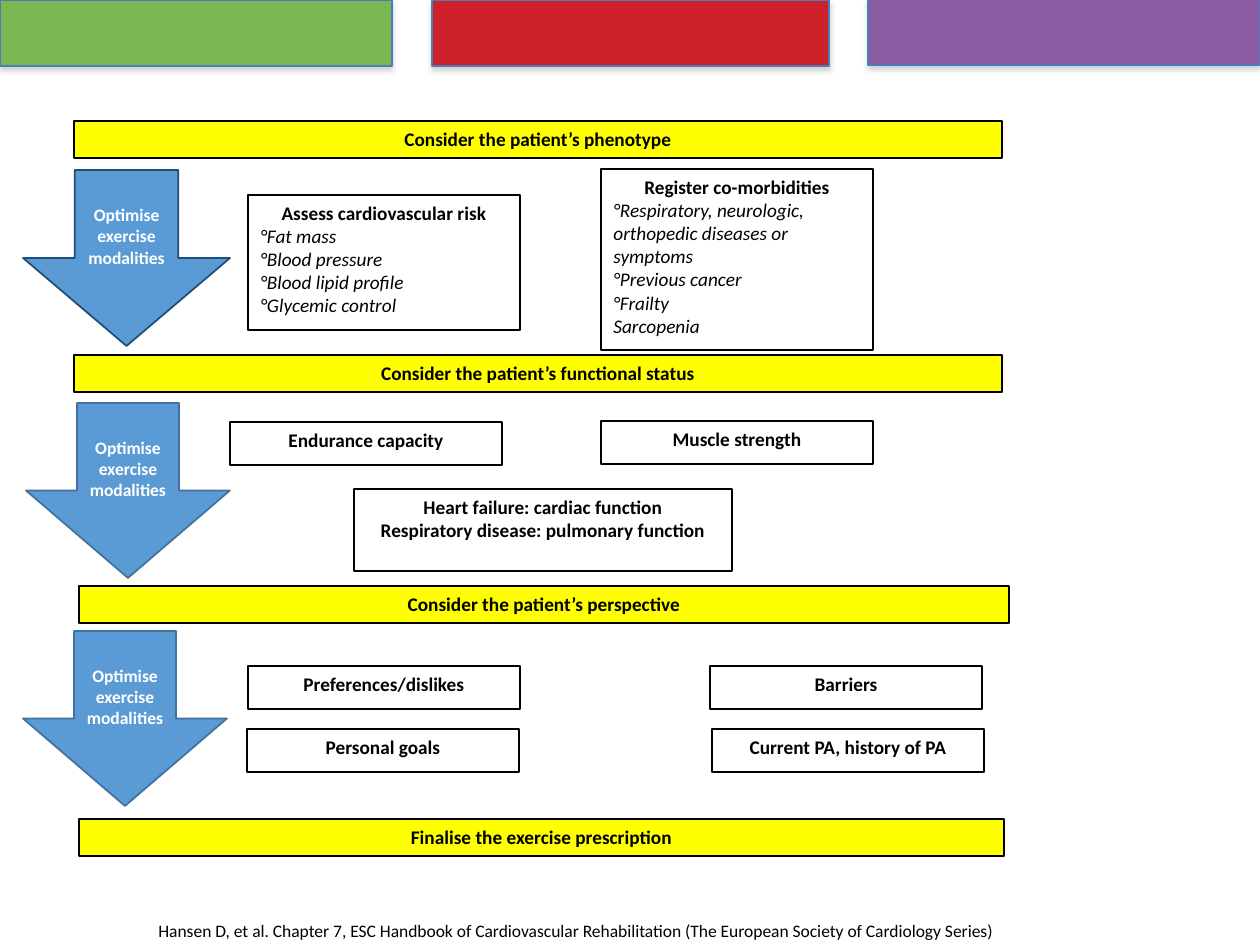
"""Builds a flow slide on tailoring an exercise prescription to the patient."""
from dataclasses import dataclass

from lxml.etree import SubElement
from pptx import Presentation
from pptx.dml.color import RGBColor
from pptx.enum.shapes import MSO_SHAPE
from pptx.enum.text import MSO_ANCHOR, MSO_AUTO_SIZE, PP_ALIGN
from pptx.oxml.ns import qn
from pptx.util import Emu, Pt

PX_PER_INCH = 126
FONT = "Calibri"
BLACK, WHITE, YELLOW, BLUE = "000000", "FFFFFF", "FFFF00", "5B9BD5"


@dataclass
class Band:
    x: int
    y: int
    w: int
    fill: str


@dataclass
class Step:
    x: int
    y: int
    w: int
    text: str


@dataclass
class Arrow:
    x: int
    y: int
    w: int
    h: int
    line: str


@dataclass
class Box:
    x: int
    y: int
    headings: tuple[str, ...]
    items: tuple[str, ...] = ()
    w: int = 272
    h: int = 43


BANDS = [
    Band(0, 0, 392, "7CB852"),
    Band(432, 0, 397, "CD2029"),
    Band(868, -1, 392, "8A5BA1"),
]
STEPS = [
    Step(74, 121, 928, "Consider the patient’s phenotype"),
    Step(74, 355, 928, "Consider the patient’s functional status"),
    Step(79, 586, 930, "Consider the patient’s perspective"),
    Step(79, 819, 925, "Finalise the exercise prescription"),
]
ARROWS = [
    Arrow(23, 170, 207, 176, "1F4D78"),
    Arrow(26, 403, 204, 175, "41719C"),
    Arrow(23, 631, 204, 175, "41719C"),
]
BOXES = [
    Box(248, 195, ("Assess cardiovascular risk",),
        ("°Fat mass", "°Blood pressure", "°Blood lipid profile", "°Glycemic control"), h=135),
    Box(601, 169, ("Register co-morbidities",),
        ("°Respiratory, neurologic, orthopedic diseases or symptoms",
         "°Previous cancer", "°Frailty", "Sarcopenia"), h=181),
    Box(230, 422, ("Endurance capacity",)),
    Box(601, 421, ("Muscle strength",)),
    Box(354, 489, ("Heart failure: cardiac function",
                   "Respiratory disease: pulmonary function"), w=378, h=82),
    Box(248, 666, ("Preferences/dislikes",)),
    Box(710, 666, ("Barriers",)),
    Box(247, 729, ("Personal goals",)),
    Box(712, 729, ("Current PA, history of PA",)),
]
CITATION = ("Hansen D, et al. Chapter 7, ESC Handbook of Cardiovascular Rehabilitation "
            "(The European Society of Cardiology Series)")


def px(n: int) -> Emu:
    """Convert pixels to EMU."""
    return Emu(round(n * 914400 / PX_PER_INCH))


def rgb(value: str) -> RGBColor:
    """Turn a hex string into a colour."""
    return RGBColor.from_string(value)


def add_shape(s, kind, x: int, y: int, w: int, h: int, fill: str, line: str, width=0.75):
    """Add a filled, outlined shape without a shadow."""
    sp = s.shapes.add_shape(kind, px(x), px(y), px(w), px(h))
    sp.shadow.inherit = False
    sp.fill.solid()
    sp.fill.fore_color.rgb = rgb(fill)
    sp.line.color.rgb = rgb(line)
    sp.line.width = Pt(width)
    sp.text_frame.word_wrap = True
    sp.text_frame.vertical_anchor = MSO_ANCHOR.TOP
    return sp


def write(tf, lines, size=11, color=BLACK, bold=False, italic=False, align=PP_ALIGN.LEFT) -> None:
    """Append paragraphs in one style, filling an empty first paragraph."""
    for text in lines:
        p = tf.add_paragraph() if tf.text else tf.paragraphs[0]
        p.add_run().text = text
        p.alignment = align
        p.font.name = FONT
        p.font.size = Pt(size)
        p.font.bold = bold
        p.font.italic = italic
        p.font.color.rgb = rgb(color)


def add_band(s, band: Band) -> None:
    """Draw a header band with a soft shadow below it."""
    sp = add_shape(s, MSO_SHAPE.RECTANGLE, band.x, band.y, band.w, 66, band.fill, "4A7EBB")
    effects = sp._element.spPr.find(qn("a:effectLst"))
    shadow = SubElement(effects, qn("a:outerShdw"), blurRad=str(Pt(3.1)), dist=str(Pt(1.8)),
                        dir="5400000", rotWithShape="0")
    color = SubElement(shadow, qn("a:srgbClr"), val="808080")
    SubElement(color, qn("a:alpha"), val="35000")


def add_step(s, step: Step) -> None:
    """Draw a yellow step bar."""
    sp = add_shape(s, MSO_SHAPE.RECTANGLE, step.x, step.y, step.w, 37, YELLOW, BLACK)
    sp.text_frame.auto_size = MSO_AUTO_SIZE.SHAPE_TO_FIT_TEXT
    write(sp.text_frame, [step.text], bold=True, align=PP_ALIGN.CENTER)


def add_arrow(s, arrow: Arrow) -> None:
    """Draw a labelled down arrow."""
    sp = add_shape(s, MSO_SHAPE.DOWN_ARROW, arrow.x, arrow.y, arrow.w, arrow.h,
                   BLUE, arrow.line, 1)
    sp.text_frame.vertical_anchor = MSO_ANCHOR.MIDDLE
    write(sp.text_frame, ["Optimise exercise modalities"], 10, WHITE, bold=True,
          align=PP_ALIGN.CENTER)


def add_box(s, box: Box) -> None:
    """Draw a white box with bold headings and italic items."""
    sp = add_shape(s, MSO_SHAPE.RECTANGLE, box.x, box.y, box.w, box.h, WHITE, BLACK)
    write(sp.text_frame, box.headings, bold=True, align=PP_ALIGN.CENTER)
    write(sp.text_frame, box.items, italic=True)


def add_citation(s) -> None:
    """Write the citation on one line at the foot."""
    tf = s.shapes.add_textbox(px(146), px(914), px(989), px(34)).text_frame
    tf.word_wrap = False
    tf.auto_size = MSO_AUTO_SIZE.SHAPE_TO_FIT_TEXT
    write(tf, [CITATION], 10)


def main() -> None:
    """Build and save the slide."""
    prs = Presentation()
    prs.slide_width, prs.slide_height = px(1260), px(945)
    s = prs.slides.add_slide(prs.slide_layouts[6])
    for draw, parts in ((add_band, BANDS), (add_step, STEPS),
                        (add_box, BOXES), (add_arrow, ARROWS)):
        for part in parts:
            draw(s, part)
    add_citation(s)
    prs.save("out.pptx")


if __name__ == "__main__":
    main()
